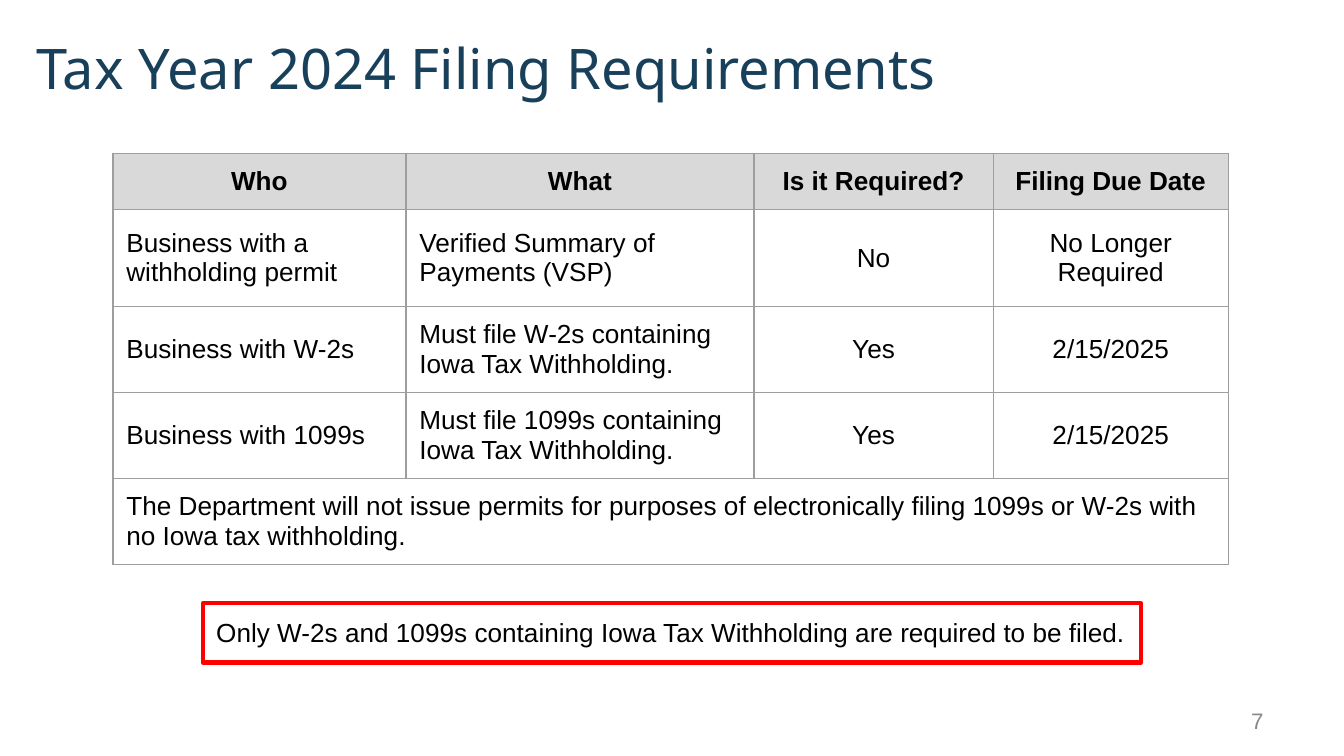
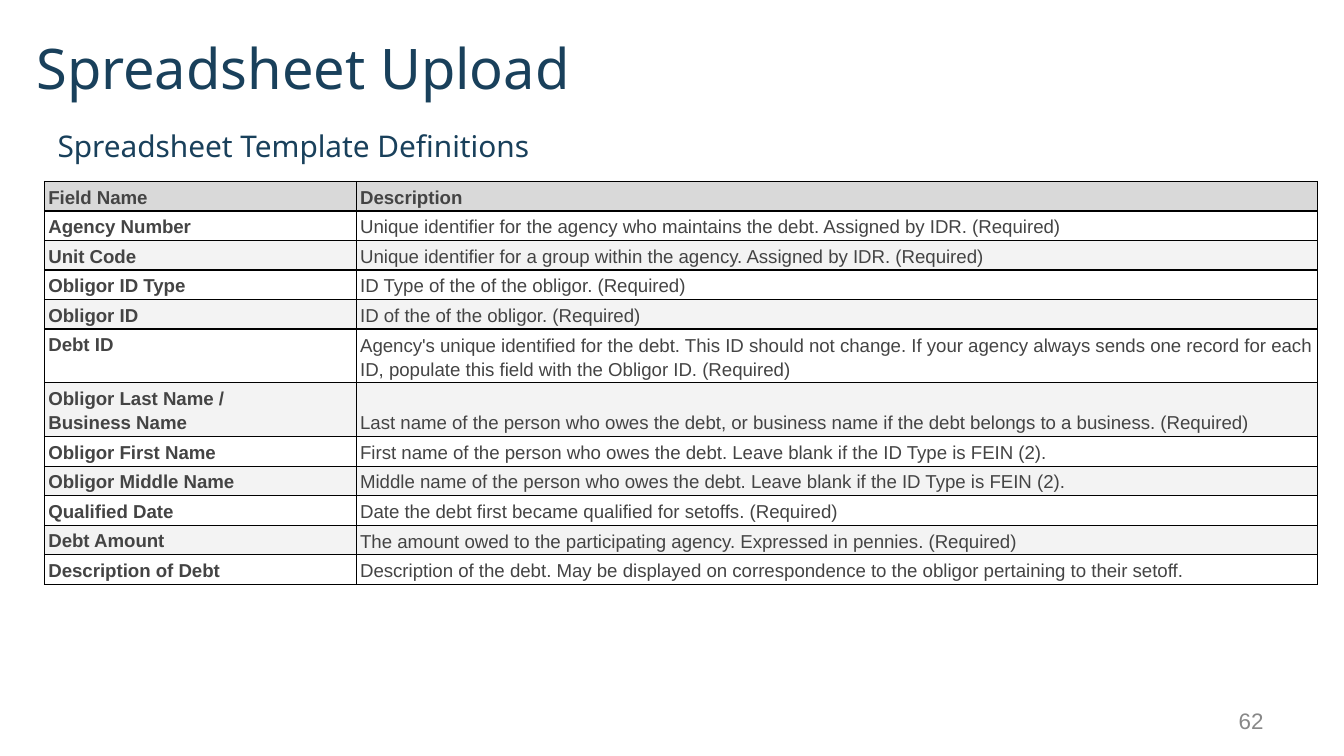
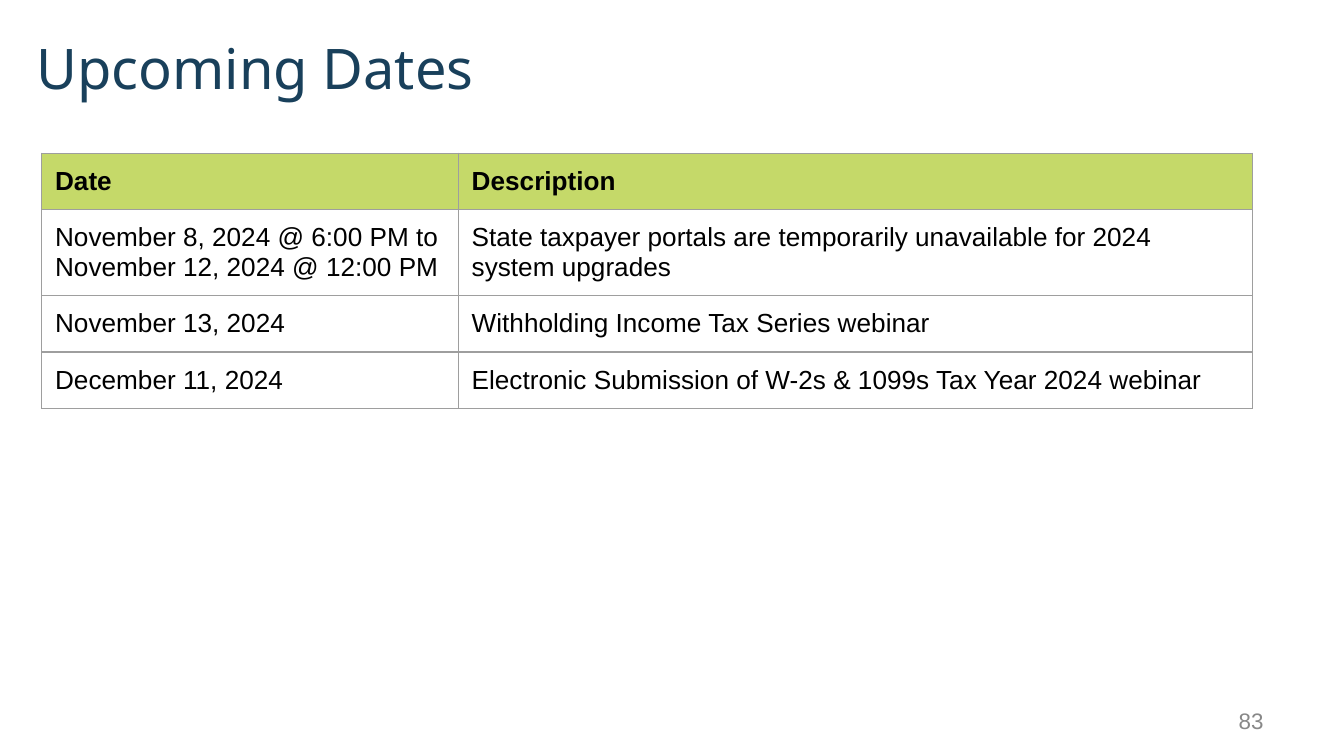
"""Build three tax filing slides with tables."""
from dataclasses import dataclass

from lxml import etree
from pptx import Presentation
from pptx.dml.color import RGBColor
from pptx.enum.shapes import MSO_SHAPE
from pptx.enum.text import MSO_ANCHOR, MSO_AUTO_SIZE, PP_ALIGN
from pptx.oxml.ns import qn
from pptx.util import Inches, Pt

LEFT, CENTER, RIGHT = PP_ALIGN.LEFT, PP_ALIGN.CENTER, PP_ALIGN.RIGHT
TOP, MIDDLE, BOTTOM = MSO_ANCHOR.TOP, MSO_ANCHOR.MIDDLE, MSO_ANCHOR.BOTTOM
NO_AUTOFIT = MSO_AUTO_SIZE.NONE
RECTANGLE = MSO_SHAPE.RECTANGLE
TITLE_ONLY = 5
SLIDE_WIDTH = 10
SLIDE_HEIGHT = SLIDE_WIDTH * 9 / 16


@dataclass(frozen=True)
class Theme:
    """Colours, fonts and type sizes shared by the slides."""
    navy: str = "19405B"
    black: str = "000000"
    charcoal: str = "444444"
    number_gray: str = "888888"
    rule_gray: str = "9E9E9E"
    header_gray: str = "D9D9D9"
    stripe_gray: str = "F3F3F3"
    white: str = "FFFFFF"
    lime: str = "C5D969"
    red: str = "FF0000"
    heading_font: str = "Noto Sans"
    body_font: str = "Arial"
    title_size: float = 30
    subtitle_size: float = 16
    body_size: float = 14
    number_size: float = 12
    definition_size: float = 10


THEME = Theme()


@dataclass(frozen=True)
class TextLook:
    """Type and paragraph settings of a text."""
    size: float = THEME.body_size
    color: str = THEME.black
    font: str = THEME.body_font
    bold: bool = False
    align: PP_ALIGN = LEFT
    spacing: float = 1.0


@dataclass(frozen=True)
class TableLook:
    """Settings that tell one table from another."""
    aligns: tuple
    anchors: tuple
    header_fill: str
    header_align: PP_ALIGN = LEFT
    body_fills: tuple = (None,)
    bold_columns: tuple = ()
    rule: tuple = (THEME.rule_gray, 0.75)
    inset: tuple = (0.1, 0.1)
    size: float = THEME.body_size
    color: str = THEME.black
    spacing: float = 1.0


FILING_LOOK = TableLook(
    aligns=(LEFT, LEFT, CENTER, CENTER), anchors=(MIDDLE,) * 4,
    header_fill=THEME.header_gray, header_align=CENTER)
DEFINITION_LOOK = TableLook(
    aligns=(LEFT, LEFT), anchors=(TOP, BOTTOM), header_fill=THEME.header_gray,
    body_fills=(THEME.white, THEME.stripe_gray), bold_columns=(0,),
    rule=(THEME.black, 0.68), inset=(0.03, 0.02),
    size=THEME.definition_size, color=THEME.charcoal, spacing=1.15)
DATES_LOOK = TableLook(
    aligns=(LEFT, LEFT), anchors=(TOP, TOP), header_fill=THEME.lime)

FILING_ROWS = [
    ("Who", "What", "Is it Required?", "Filing Due Date"),
    ("Business with a withholding permit", "Verified Summary of Payments (VSP)",
     "No", "No Longer Required"),
    ("Business with W-2s", "Must file W-2s containing Iowa Tax Withholding.",
     "Yes", "2/15/2025"),
    ("Business with 1099s", "Must file 1099s containing Iowa Tax Withholding.",
     "Yes", "2/15/2025"),
    ("The Department will not issue permits for purposes of electronically "
     "filing 1099s or W-2s with no Iowa tax withholding.",),
]
DEFINITION_ROWS = [
    ("Field Name", "Description"),
    ("Agency Number", "Unique identifier for the agency who maintains the debt. "
     "Assigned by IDR. (Required)"),
    ("Unit Code", "Unique identifier for a group within the agency. "
     "Assigned by IDR. (Required)"),
    ("Obligor ID Type", "ID Type of the of the obligor. (Required)"),
    ("Obligor ID", "ID of the of the obligor. (Required)"),
    ("Debt ID", "Agency's unique identified for the debt. This ID should not "
     "change. If your agency always sends one record for each ID, populate "
     "this field with the Obligor ID. (Required)"),
    ("Obligor Last Name /\nBusiness Name", "Last name of the person who owes "
     "the debt, or business name if the debt belongs to a business. (Required)"),
    ("Obligor First Name", "First name of the person who owes the debt. "
     "Leave blank if the ID Type is FEIN (2)."),
    ("Obligor Middle Name", "Middle name of the person who owes the debt. "
     "Leave blank if the ID Type is FEIN (2)."),
    ("Qualified Date", "Date the debt first became qualified for setoffs. (Required)"),
    ("Debt Amount", "The amount owed to the participating agency. "
     "Expressed in pennies. (Required)"),
    ("Description of Debt", "Description of the debt. May be displayed on "
     "correspondence to the obligor pertaining to their setoff."),
]
DATES_ROWS = [
    ("Date", "Description"),
    ("November 8, 2024 @ 6:00 PM to\nNovember 12, 2024 @ 12:00 PM",
     "State taxpayer portals are temporarily unavailable for 2024 system upgrades"),
    ("November 13, 2024", "Withholding Income Tax Series webinar"),
    ("December 11, 2024",
     "Electronic Submission of W-2s & 1099s Tax Year 2024 webinar"),
]


def set_values(target, values):
    """Set each named value on the target."""
    for name, value in values.items():
        setattr(target, name, value)


def set_frame(holder, anchor, inset):
    """Set the anchor and insets of a text frame or table cell."""
    across, down = map(Inches, inset)
    set_values(holder, {
        "vertical_anchor": anchor, "margin_left": across, "margin_right": across,
        "margin_top": down, "margin_bottom": down})


def write_text(frame, text, look):
    """Write one formatted paragraph for each line of the text."""
    frame.text = text
    for paragraph in frame.paragraphs:
        set_values(paragraph, {"alignment": look.align, "line_spacing": look.spacing})
        for run in paragraph.runs:
            set_values(run.font, {
                "name": look.font, "size": Pt(look.size), "bold": look.bold})
            run.font.color.rgb = RGBColor.from_string(look.color)


def fill_box(shape, text, look, anchor=TOP, inset=(0.1, 0.1)):
    """Put wrapped text in a shape."""
    set_values(shape.text_frame, {"word_wrap": True, "auto_size": NO_AUTOFIT})
    set_frame(shape.text_frame, anchor, inset)
    write_text(shape.text_frame, text, look)


def add_text(slide, place, text, look, **frame_values):
    """Add a text box at the place."""
    box = slide.shapes.add_textbox(*map(Inches, place))
    fill_box(box, text, look, **frame_values)


def add_titled_slide(deck, title, number):
    """Add a slide with its title and page number."""
    slide = deck.slides.add_slide(deck.slide_layouts[TITLE_ONLY])
    heading = slide.shapes.title
    set_values(heading, {"left": Inches(0.17), "top": Inches(0),
                         "width": Inches(9.64), "height": Inches(0.8)})
    fill_box(heading, title,
             TextLook(THEME.title_size, THEME.navy, THEME.heading_font),
             BOTTOM, (0.1, 0.05))
    add_text(slide, (7.17, 5.21, 2.33, 0.3), str(number),
             TextLook(THEME.number_size, THEME.number_gray, align=RIGHT),
             anchor=MIDDLE, inset=(0.1, 0.05))
    return slide


def set_cell_borders(cell, rule):
    """Draw a rule on the four sides of a cell."""
    color, width = rule
    properties = cell._tc.get_or_add_tcPr()
    for index, side in enumerate("LRTB"):
        line = etree.Element(qn(f"a:ln{side}"), w=str(Pt(width)))
        paint = etree.SubElement(line, qn("a:solidFill"))
        etree.SubElement(paint, qn("a:srgbClr"), val=color)
        properties.insert(index, line)


def set_cell_fill(cell, color):
    """Fill a cell, or leave it clear when there is no colour."""
    if color is None:
        cell.fill.background()
    else:
        cell.fill.solid()
        cell.fill.fore_color.rgb = RGBColor.from_string(color)


def format_cell(cell, text, row, column, look):
    """Write a cell and format it by its row and column."""
    is_header = row == 0
    body_fill = look.body_fills[(row - 1) % len(look.body_fills)]
    set_cell_fill(cell, look.header_fill if is_header else body_fill)
    set_cell_borders(cell, look.rule)
    set_frame(cell, look.anchors[column], look.inset)
    write_text(cell.text_frame, text, TextLook(
        look.size, look.color, bold=is_header or column in look.bold_columns,
        align=look.header_align if is_header else look.aligns[column],
        spacing=look.spacing))


def add_ruled_table(slide, corner, widths, heights, rows, look):
    """Add a table, where a row with a single text spans all columns."""
    place = (*corner, sum(widths), sum(heights))
    table = slide.shapes.add_table(
        len(rows), len(widths), *map(Inches, place)).table
    set_values(table, {"first_row": False, "horz_banding": False})
    for column, width in zip(table.columns, widths):
        column.width = Inches(width)
    for row, (texts, height) in enumerate(zip(rows, heights)):
        table.rows[row].height = Inches(height)
        for column in range(len(widths)):
            text = texts[column] if column < len(texts) else ""
            format_cell(table.cell(row, column), text, row, column, look)
        if len(texts) == 1:
            table.cell(row, 0).merge(table.cell(row, len(widths) - 1))


def add_callout(slide, place, text):
    """Add a red outlined box with a remark."""
    callout = slide.shapes.add_shape(RECTANGLE, *map(Inches, place))
    callout.shadow.inherit = False
    callout.fill.background()
    callout.line.color.rgb = RGBColor.from_string(THEME.red)
    callout.line.width = Pt(2.25)
    fill_box(callout, text, TextLook())


def main():
    """Build and save the deck."""
    deck = Presentation()
    set_values(deck, {"slide_width": Inches(SLIDE_WIDTH),
                      "slide_height": Inches(SLIDE_HEIGHT)})

    filing = add_titled_slide(deck, "Tax Year 2024 Filing Requirements", 7)
    add_ruled_table(filing, (0.84, 1.14), (2.18, 2.59, 1.78, 1.75),
                    (0.42, 0.72, 0.64, 0.64, 0.64), FILING_ROWS, FILING_LOOK)
    add_callout(filing, (1.51, 4.49, 6.98, 0.44),
                "Only W-2s and 1099s containing Iowa Tax Withholding "
                "are required to be filed.")

    upload = add_titled_slide(deck, "Spreadsheet Upload", 62)
    add_ruled_table(upload, (0.33, 1.35), (2.32, 7.15),
                    (0.22,) * 5 + (0.4,) * 2 + (0.22,) * 5,
                    DEFINITION_ROWS, DEFINITION_LOOK)
    add_text(upload, (0.33, 0.85, 5.91, 0.41), "Spreadsheet Template Definitions",
             TextLook(THEME.subtitle_size, THEME.navy, THEME.heading_font))

    dates = add_titled_slide(deck, "Upcoming Dates", 83)
    add_ruled_table(dates, (0.31, 1.14), (3.1, 5.91), (0.42, 0.64, 0.42, 0.42),
                    DATES_ROWS, DATES_LOOK)

    deck.save("out.pptx")


if __name__ == "__main__":
    main()
